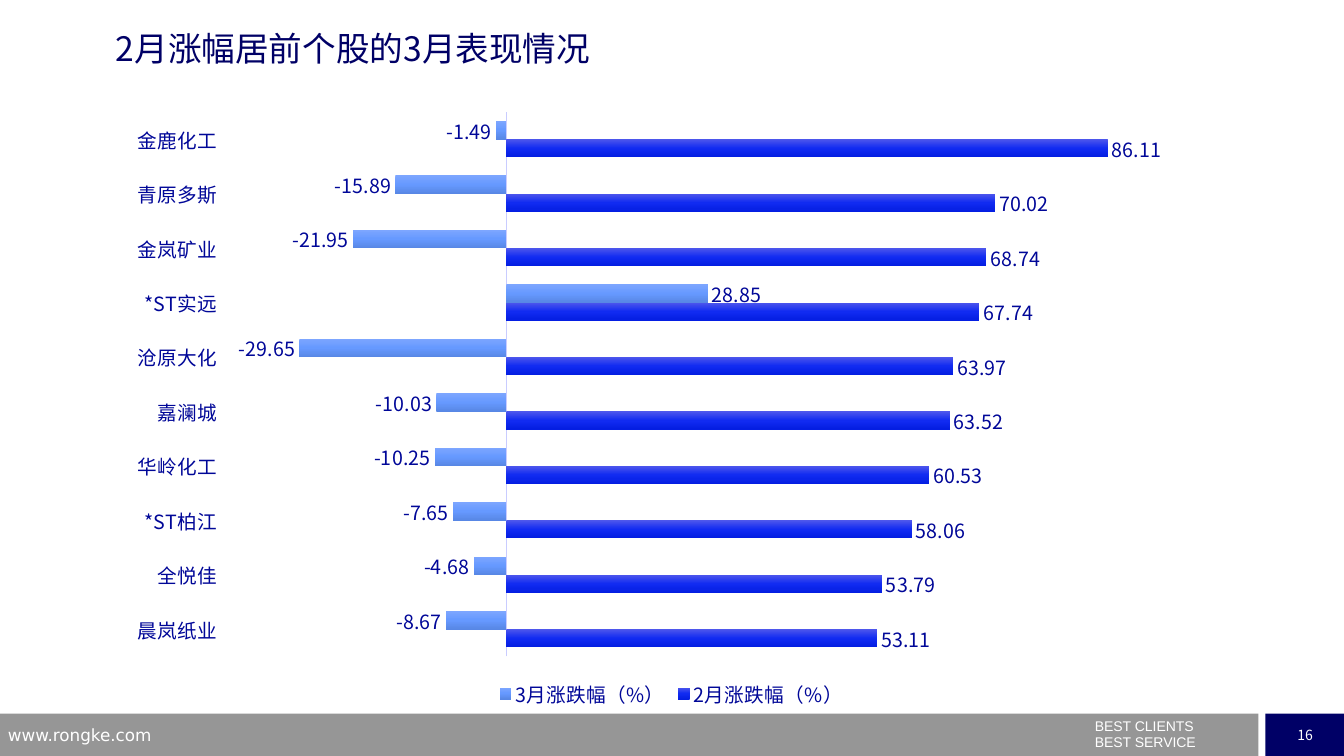
from copy import deepcopy

from lxml import etree
from pptx import Presentation
from pptx.chart.data import CategoryChartData
from pptx.dml.color import RGBColor
from pptx.enum.chart import XL_CHART_TYPE, XL_LABEL_POSITION, XL_LEGEND_POSITION, XL_TICK_LABEL_POSITION, XL_TICK_MARK
from pptx.enum.shapes import MSO_SHAPE
from pptx.enum.text import MSO_ANCHOR, PP_ALIGN
from pptx.oxml.ns import qn
from pptx.util import Inches, Pt

BAR_CLUSTERED = XL_CHART_TYPE.BAR_CLUSTERED
OUTSIDE_END = XL_LABEL_POSITION.OUTSIDE_END
LEGEND_BOTTOM = XL_LEGEND_POSITION.BOTTOM
LABELS_LOW = XL_TICK_LABEL_POSITION.LOW
NO_TICKS = XL_TICK_MARK.NONE
RECTANGLE = MSO_SHAPE.RECTANGLE
MIDDLE, TOP = MSO_ANCHOR.MIDDLE, MSO_ANCHOR.TOP
CENTER, LEFT = PP_ALIGN.CENTER, PP_ALIGN.LEFT

CJK, LATIN, WEB = "Noto Sans CJK SC", "Arial", "DejaVu Sans"
COLORS = {
    "navy": "000066",
    "label": "000798",
    "axis": "C9CCFF",
    "footer": "969696",
    "white": "FFFFFF",
}

TITLE = "2月涨幅居前个股的3月表现情况"
SITE = "www.rongke.com"
SLOGAN = ["BEST CLIENTS", "BEST SERVICE"]
PAGE = "16"

FEBRUARY, MARCH = "2月涨跌幅（%）", "3月涨跌幅（%）"
STOCKS = [
    ("晨岚纸业", 53.11, -8.67),
    ("全悦佳", 53.79, -4.68),
    ("*ST柏江", 58.06, -7.65),
    ("华岭化工", 60.53, -10.25),
    ("嘉澜城", 63.52, -10.03),
    ("沧原大化", 63.97, -29.65),
    ("*ST实远", 67.74, 28.85),
    ("金岚矿业", 68.74, -21.95),
    ("青原多斯", 70.02, -15.89),
    ("金鹿化工", 86.11, -1.49),
]
GRADIENTS = {
    FEBRUARY: ["4E57EC", "112BF1", "041EE2"],
    MARCH: ["7DA6FF", "6699FF", "5887E5"],
}
PLOT_LAYOUT = {"x": 0.1, "y": 0.02, "w": 0.88, "h": 0.89}


def rgb(name):
    return RGBColor.from_string(COLORS[name])


def set_font(font, name, size, color):
    font.name, font.size = name, Pt(size)
    font.color.rgb = rgb(color)


def add_band(slide, box, color):
    band = slide.shapes.add_shape(RECTANGLE, *map(Inches, box))
    band.shadow.inherit = False
    band.fill.solid()
    band.fill.fore_color.rgb = rgb(color)
    band.line.fill.background()
    return band


def write(frame, lines, name, size, color, align=LEFT, anchor=TOP):
    frame.vertical_anchor = anchor
    for index, line in enumerate(lines):
        paragraph = frame.add_paragraph() if index else frame.paragraphs[0]
        paragraph.text = line
        paragraph.alignment = align
        set_font(paragraph.font, name, size, color)


def add_text(slide, box, lines, name, size, color):
    frame = slide.shapes.add_textbox(*map(Inches, box)).text_frame
    frame.word_wrap = True
    write(frame, lines, name, size, color)
    return frame


def paint_gradient(series, shades):
    fill = series.format.fill
    fill.gradient()
    fill.gradient_angle = 270
    stop_list = next(series._element.iter(qn("a:gsLst")))
    stop_list.append(deepcopy(stop_list[-1]))
    for index, (stop, shade) in enumerate(zip(fill.gradient_stops, shades)):
        stop.position = index / (len(shades) - 1)
        stop.color.rgb = RGBColor.from_string(shade)


def fix_plot_layout(chart):
    plot_area = next(chart._chartSpace.iter(qn("c:plotArea")))
    for old in plot_area.findall(qn("c:layout")):
        plot_area.remove(old)
    layout = etree.Element(qn("c:layout"))
    manual = etree.SubElement(layout, qn("c:manualLayout"))
    settings = {"layoutTarget": "inner", "xMode": "edge", "yMode": "edge", **PLOT_LAYOUT}
    for tag, value in settings.items():
        etree.SubElement(manual, qn("c:" + tag)).set("val", str(value))
    plot_area.insert(0, layout)


def add_stock_chart(slide):
    names, february, march = zip(*STOCKS)
    data = CategoryChartData(number_format="0.00")
    data.categories = names
    data.add_series(FEBRUARY, february)
    data.add_series(MARCH, march)
    box = map(Inches, (1.15, 0.99, 11.02, 6.07))
    chart = slide.shapes.add_chart(BAR_CLUSTERED, *box, data).chart
    set_font(chart.font, CJK, 14, "label")
    chart.has_title = False
    chart.has_legend = True
    chart.legend.position = LEGEND_BOTTOM
    chart.legend.include_in_layout = False
    set_font(chart.legend.font, CJK, 14, "label")

    stock_axis = chart.category_axis
    stock_axis.tick_label_position = LABELS_LOW
    stock_axis.major_tick_mark = stock_axis.minor_tick_mark = NO_TICKS
    stock_axis.format.line.color.rgb = rgb("axis")
    stock_axis.format.line.width = Pt(0.75)
    set_font(stock_axis.tick_labels.font, CJK, 14, "label")

    change_axis = chart.value_axis
    change_axis.minimum_scale, change_axis.maximum_scale = -40, 100
    change_axis.has_major_gridlines = False
    change_axis.visible = False

    plot = chart.plots[0]
    plot.gap_width, plot.overlap = 100, 0
    plot.vary_by_categories = False
    for series in plot.series:
        series.invert_if_negative = False
        paint_gradient(series, GRADIENTS[series.name])
        labels = series.data_labels
        labels.show_value = True
        labels.number_format, labels.number_format_is_linked = "0.00", False
        labels.position = OUTSIDE_END
        set_font(labels.font, CJK, 14, "label")
    fix_plot_layout(chart)


def main():
    deck = Presentation()
    deck.slide_width, deck.slide_height = Inches(13.33), Inches(7.5)
    slide = deck.slides.add_slide(deck.slide_layouts[6])

    add_band(slide, (0, 7.08, 12.48, 0.42), "footer")
    page = add_band(slide, (12.55, 7.08, 0.79, 0.42), "navy").text_frame
    page.word_wrap = False
    write(page, [PAGE], CJK, 10, "white", CENTER, MIDDLE)

    slogan = add_text(slide, (10.76, 7.14, 2.56, 0.36), SLOGAN, LATIN, 10, "white")
    for paragraph in slogan.paragraphs:
        paragraph.line_spacing = 0.5
    slogan.paragraphs[1].space_before = Pt(5.75)

    add_text(slide, (-0.02, 7.14, 3.22, 0.26), [SITE], WEB, 12, "white")
    title = add_text(slide, (1.15, 0.28, 9, 0.6), [TITLE], CJK, 24, "navy")
    title.margin_left = title.margin_right = title.margin_top = title.margin_bottom = 0
    add_stock_chart(slide)
    deck.save("out.pptx")


if __name__ == "__main__":
    main()
